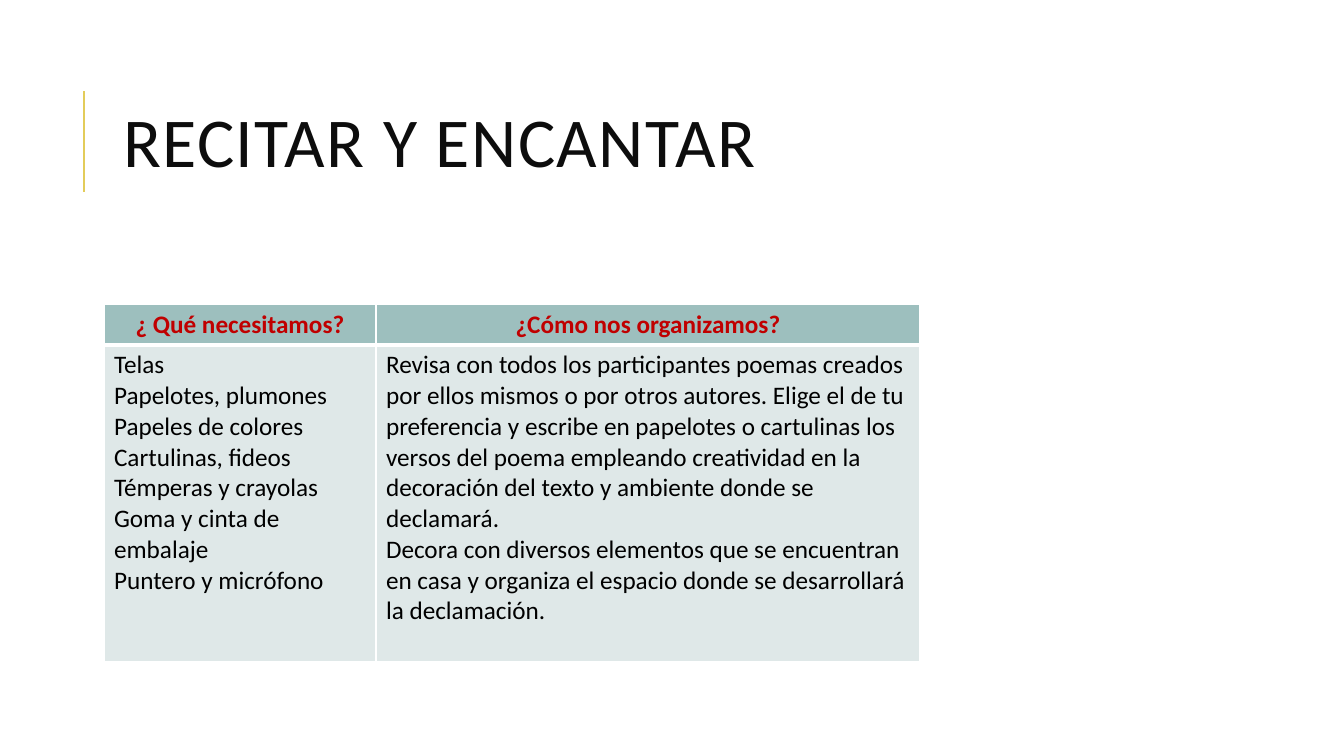
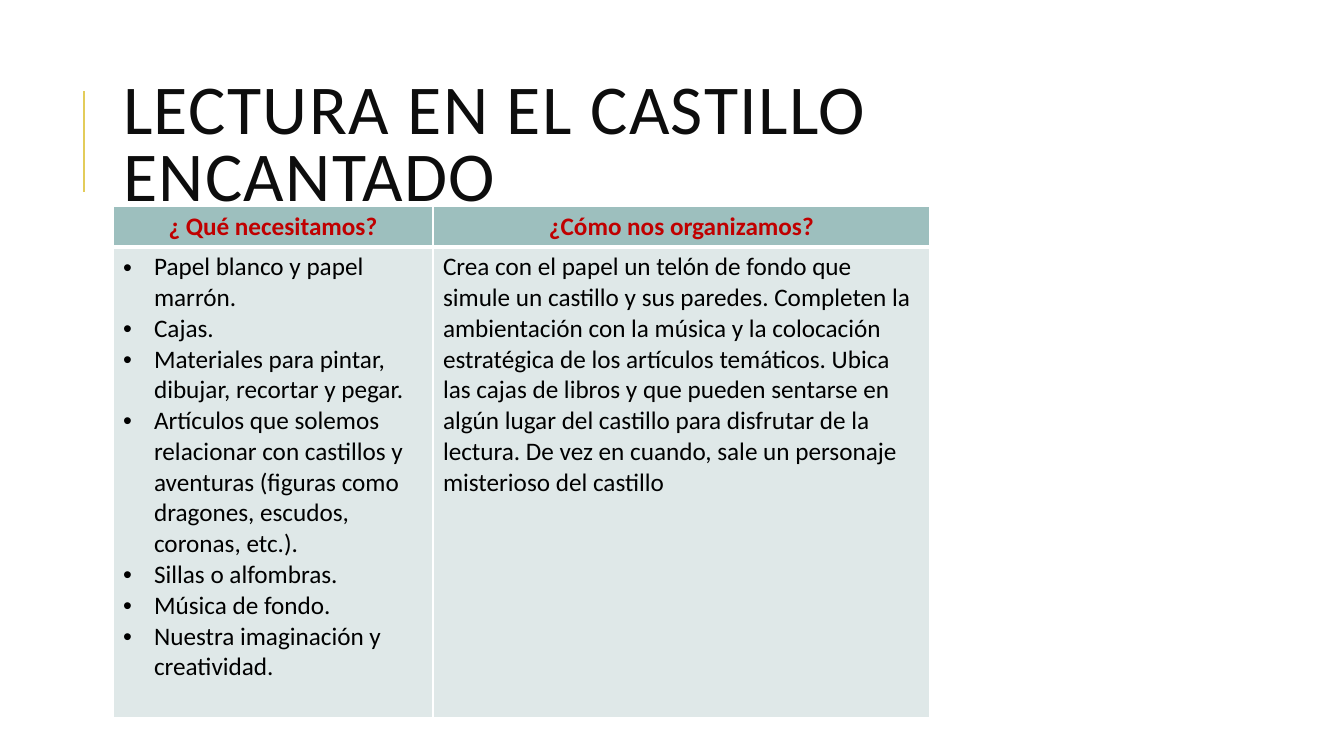
from dataclasses import dataclass

from lxml import etree
from pptx import Presentation
from pptx.dml.color import RGBColor
from pptx.enum.shapes import MSO_CONNECTOR
from pptx.enum.text import MSO_ANCHOR, MSO_AUTO_SIZE, PP_ALIGN
from pptx.oxml.ns import qn
from pptx.util import Emu, Pt

STRAIGHT = MSO_CONNECTOR.STRAIGHT
MIDDLE, NO_FIT = MSO_ANCHOR.MIDDLE, MSO_AUTO_SIZE.NONE
LEFT, CENTER = PP_ALIGN.LEFT, PP_ALIGN.CENTER
TITLE_ONLY = 5
EMU_PER_PX = 914400 / 100.8
EMU_PER_POINT = 12700


@dataclass(frozen=True)
class Theme:
    """Colours and type sizes shared by the slides."""
    font: str = "Calibri"
    title_size: int = 50
    table_size: int = 18
    title_color: str = "0D0D0D"
    rule_color: str = "E3CC5A"
    header_color: str = "C00000"
    body_color: str = "000000"
    header_fill: str = "9DBFBE"
    body_fill: str = "DFE8E8"
    border_color: str = "FFFFFF"
    rule_width: float = 1.5
    thin_border: int = 1
    header_border: int = 3


THEME = Theme()
HEADERS = ["¿ Qué necesitamos?", "¿Cómo nos organizamos?"]
ACTIVITIES = [
    {
        "title": "RECITAR Y ENCANTAR",
        "position": (104, 304),
        "columns": (272, 544),
        "body_height": 317,
        "bulleted": False,
        "materials": [
            "Telas",
            "Papelotes, plumones",
            "Papeles de colores",
            "Cartulinas, fideos",
            "Témperas y crayolas",
            "Goma y cinta de embalaje",
            "Puntero y micrófono",
        ],
        "steps": [
            "Revisa con todos los participantes poemas creados por ellos mismos "
            "o por otros autores. Elige el de tu preferencia y escribe en "
            "papelotes o cartulinas los versos del poema empleando creatividad "
            "en la decoración del texto y ambiente donde se declamará.",
            "Decora con diversos elementos que se encuentran en casa y organiza "
            "el espacio donde se desarrollará la declamación.",
        ],
    },
    {
        "title": "LECTURA EN EL CASTILLO ENCANTADO",
        "position": (113, 206),
        "columns": (320, 497),
        "body_height": 471,
        "bulleted": True,
        "materials": [
            "Papel blanco y papel marrón.",
            "Cajas.",
            "Materiales para pintar, dibujar, recortar y pegar.",
            "Artículos que solemos relacionar con castillos y aventuras "
            "(figuras como dragones, escudos, coronas, etc.).",
            "Sillas o alfombras.",
            "Música de fondo.",
            "Nuestra imaginación y creatividad.",
        ],
        "steps": [
            "Crea con el papel un telón de fondo que simule un castillo y sus "
            "paredes. Completen la ambientación con la música y la colocación "
            "estratégica de los artículos temáticos. Ubica las cajas de libros "
            "y que pueden sentarse en algún lugar del castillo para disfrutar "
            "de la lectura. De vez en cuando, sale un personaje misterioso del "
            "castillo",
        ],
    },
]


def px(length):
    """Turn pixels into EMU."""
    return Emu(round(length * EMU_PER_PX))


def apply(target, values):
    """Set each attribute of a target from a dict."""
    for name, value in values.items():
        setattr(target, name, value)


class Deck:
    """Holds the theme, the presentation and the current slide."""

    def __init__(self, theme):
        """Start an empty wide presentation."""
        self.theme = theme
        self.presentation = Presentation()
        apply(self.presentation, {"slide_width": px(1344), "slide_height": px(756)})
        self.slide = None

    def add_slide(self, title):
        """Add a slide with its title and side rule."""
        layout = self.presentation.slide_layouts[TITLE_ONLY]
        self.slide = self.presentation.slides.add_slide(layout)
        self.add_rule(84, 91, 192)
        self.set_title(title)

    def add_rule(self, x, top, bottom):
        """Draw a vertical rule."""
        rule = self.slide.shapes.add_connector(
            STRAIGHT, px(x), px(bottom), px(x), px(top))
        rule.line.color.rgb = RGBColor.from_string(self.theme.rule_color)
        rule.line.width = Pt(self.theme.rule_width)
        etree.SubElement(rule._element.spPr, qn("a:effectLst"))

    def set_title(self, text):
        """Place and format the title placeholder."""
        title = self.slide.shapes.title
        apply(title, {"left": px(113), "top": px(65),
                      "width": px(1071), "height": px(165)})
        apply(title.text_frame, {"auto_size": NO_FIT, "word_wrap": True,
                                 "vertical_anchor": MIDDLE})
        paragraph = title.text_frame.paragraphs[0]
        apply(paragraph, {"alignment": LEFT, "line_spacing": 0.8})
        run = paragraph.add_run()
        run.text = text
        self.set_font(run.font, self.theme.title_size, self.theme.title_color)
        run._r.get_or_add_rPr().set("spc", "100")

    def set_font(self, font, size, color, bold=False):
        """Give a font the theme face, a size and a colour."""
        apply(font, {"name": self.theme.font, "size": Pt(size), "bold": bold})
        font.color.rgb = RGBColor.from_string(color)

    def add_table(self, position, columns, body_height, materials, steps, bulleted):
        """Add the table of materials and steps."""
        heights = (40, body_height)
        table = self.slide.shapes.add_table(
            len(heights), len(columns), *map(px, position),
            px(sum(columns)), px(sum(heights))).table
        table.horz_banding = False
        for column, width in zip(table.columns, columns):
            column.width = px(width)
        for row, height in zip(table.rows, heights):
            row.height = px(height)
        for index, header in enumerate(HEADERS):
            self.fill_cell(table.cell(0, index), [header], is_header=True)
        self.fill_cell(table.cell(1, 0), materials, bulleted=bulleted)
        self.fill_cell(table.cell(1, 1), steps)

    def fill_cell(self, cell, lines, is_header=False, bulleted=False):
        """Write a cell and give it fill, borders and type."""
        theme = self.theme
        fill = theme.header_fill if is_header else theme.body_fill
        color = theme.header_color if is_header else theme.body_color
        cell.fill.solid()
        cell.fill.fore_color.rgb = RGBColor.from_string(fill)
        self.set_borders(cell, "lnB" if is_header else "lnT")
        cell.text = "\n".join(lines)
        for paragraph in cell.text_frame.paragraphs:
            if bulleted:
                self.add_bullet(paragraph)
            paragraph.alignment = CENTER if is_header else LEFT
            for run in paragraph.runs:
                self.set_font(run.font, theme.table_size, color, is_header)

    def set_borders(self, cell, thick_side):
        """Border a cell, with a thicker line between header and body."""
        properties = cell._tc.get_or_add_tcPr()
        for index, side in enumerate(("lnL", "lnR", "lnT", "lnB")):
            width = (self.theme.header_border if side == thick_side
                     else self.theme.thin_border)
            line = etree.Element(qn(f"a:{side}"), w=str(width * EMU_PER_POINT))
            solid = etree.SubElement(line, qn("a:solidFill"))
            etree.SubElement(solid, qn("a:srgbClr"), val=self.theme.border_color)
            properties.insert(index, line)

    def add_bullet(self, paragraph):
        """Give a paragraph a round bullet and hanging indent."""
        properties = paragraph._p.get_or_add_pPr()
        properties.set("marL", str(px(31)))
        properties.set("indent", str(px(-31)))
        etree.SubElement(properties, qn("a:buFont"), typeface="Arial")
        etree.SubElement(properties, qn("a:buChar"), char="•")


def main():
    """Build and save the slides."""
    deck = Deck(THEME)
    for activity in ACTIVITIES:
        table = dict(activity)
        deck.add_slide(table.pop("title"))
        deck.add_table(**table)
    deck.presentation.save("out.pptx")


if __name__ == "__main__":
    main()
